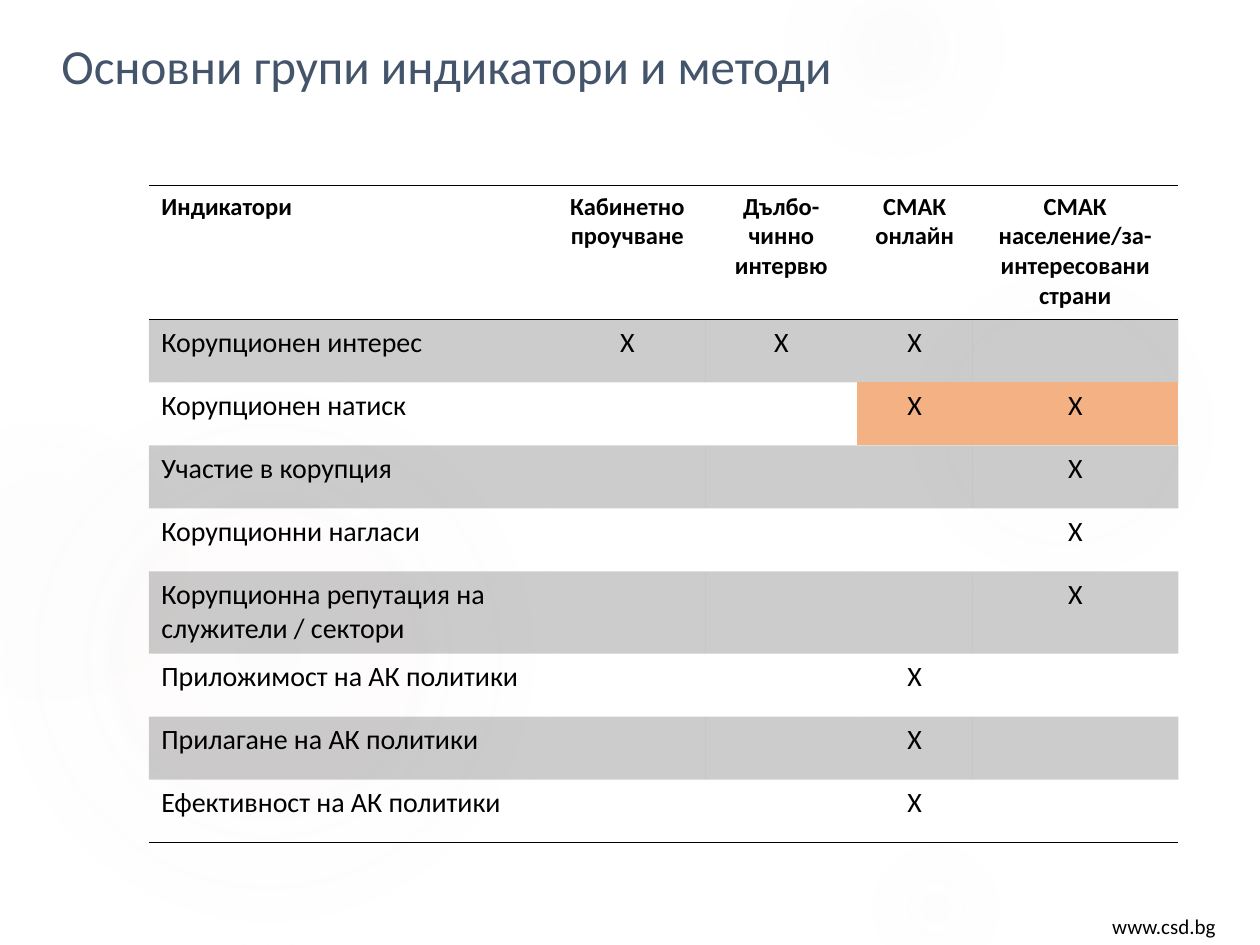
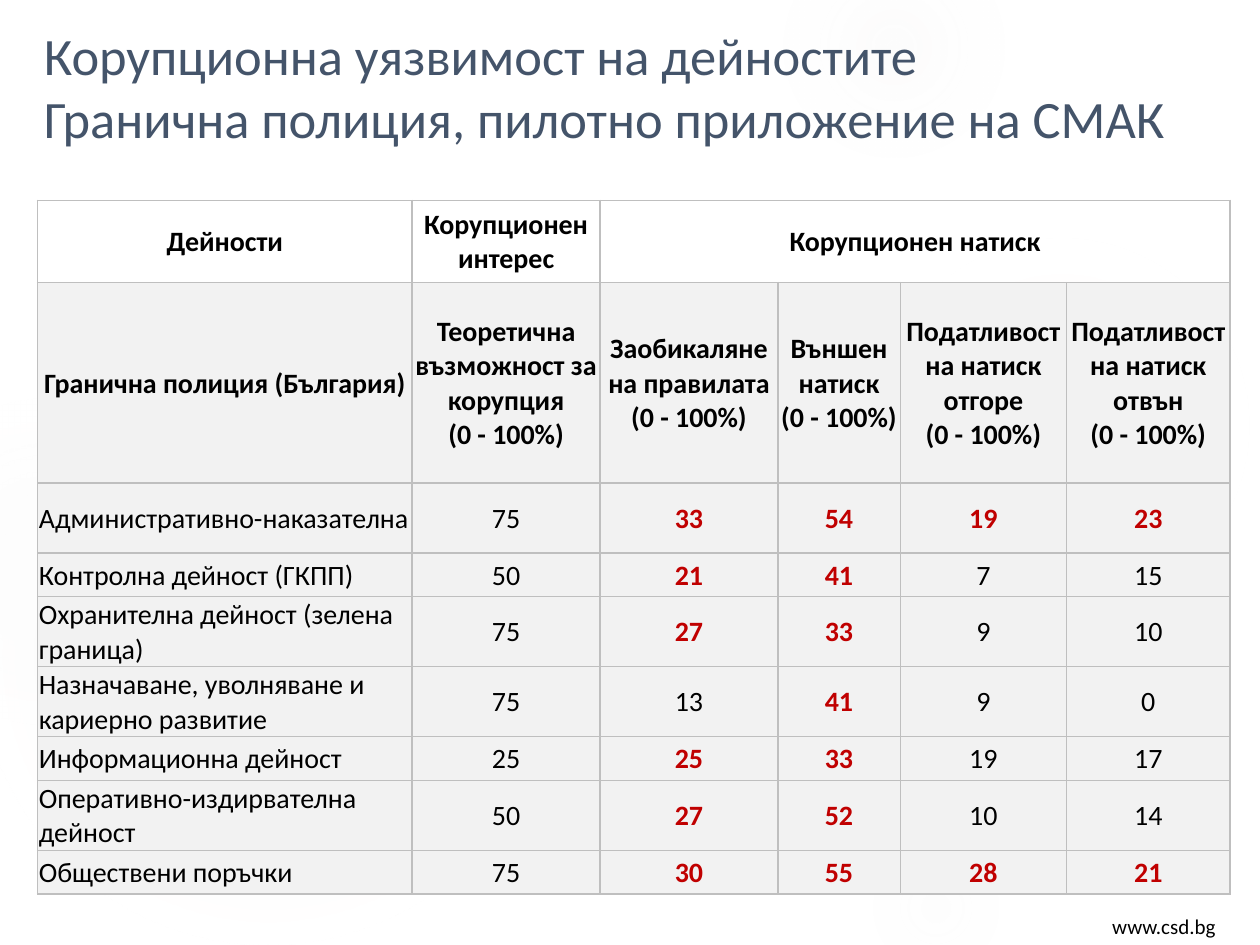
import pptx
import pptx.dml.color
import pptx.enum.shapes
import pptx.enum.text
import pptx.oxml
import pptx.oxml.ns
import pptx.util

Pt = pptx.util.Pt
ALIGN = pptx.enum.text.PP_ALIGN
ANCHOR = pptx.enum.text.MSO_ANCHOR

FONT = "Calibri"
COLORS = {
    "title": "44546A",
    "text": "000000",
    "high": "C00000",
    "rule": "000000",
    "grid": "BFBFBF",
    "stripe": "000000",
    "pressure": "F4B183",
    "panel": "F2F2F2",
    "halo": "F1F0F0",
}
PLAIN_TABLE_STYLE = "{2D5ABB26-0587-4C30-8999-92F81FD0307C}"
SIDES = ("L", "R", "T", "B")

HALOS = [
    (496, 132, 222, ((0, 7), (36, 6), (69, 0))),
    (448, -36, 126, ((0, 14), (36, 7), (73, 0))),
    (496, 480, 78, ((0, 9), (36, 5), (66, 0))),
    (-12, 210, 330, ((0, 11), (36, 10), (75, 0))),
    (-66, 228, 186, ((0, 8), (36, 8), (72, 0))),
]

METHODS = [
    "Индикатори",
    "Кабинетно проучване",
    "Дълбо-чинно интервю",
    "СМАК онлайн",
    "СМАК население/за-интересовани страни",
]
INDICATORS = [
    ("Корупционен интерес", (1, 2, 3)),
    ("Корупционен натиск", (3, 4)),
    ("Участие в корупция", (4,)),
    ("Корупционни нагласи", (4,)),
    ("Корупционна репутация на служители / сектори", (4,)),
    ("Приложимост на АК политики", (3,)),
    ("Прилагане на АК политики", (3,)),
    ("Ефективност на АК политики", (3,)),
]
PRESSURE_ROW = 2

GROUPS = ["Дейности", "Корупционен интерес", "Корупционен натиск", "", "", ""]
MEASURES = [
    "Гранична полиция (България)",
    "Теоретична възможност за корупция\v(0 - 100%)",
    "Заобикаляне на правилата\v(0 - 100%)",
    "Външен натиск\v(0 - 100%)",
    "Податливост на натиск отгоре\v(0 - 100%)",
    "Податливост на натиск отвън\v(0 - 100%)",
]
ACTIVITIES = [
    ("Административно-наказателна", 75, 33, 54, 19, 23),
    ("Контролна дейност (ГКПП)", 50, 21, 41, 7, 15),
    ("Охранителна дейност (зелена граница)", 75, 27, 33, 9, 10),
    ("Назначаване, уволняване и кариерно развитие", 75, 13, 41, 9, 0),
    ("Информационна дейност", 25, 25, 33, 19, 17),
    ("Оперативно-издирвателна дейност", 50, 27, 52, 10, 14),
    ("Обществени поръчки", 75, 30, 55, 28, 21),
]
HIGH_ABOVE = 20
EXTRA_HIGH = (2, 4)


def rgb(color):
    return pptx.dml.color.RGBColor.from_string(COLORS[color])


def format_text(frame, size, color="text", bold=False, align=ALIGN.LEFT):
    for paragraph in frame.paragraphs:
        paragraph.alignment = align
        for part in (paragraph, *paragraph.runs):
            part.font.name = FONT
            part.font.size = Pt(size)
            part.font.bold = bold
            part.font.color.rgb = rgb(color)


def add_text(slide, text, left, top, width, height, size, color="text"):
    frame = slide.shapes.add_textbox(Pt(left), Pt(top), Pt(width), Pt(height)).text_frame
    frame.word_wrap = True
    frame.text = text
    format_text(frame, size, color)


def add_halo(slide, left, top, diameter, stops):
    halo = slide.shapes.add_shape(
        pptx.enum.shapes.MSO_SHAPE.OVAL, Pt(left), Pt(top), Pt(diameter), Pt(diameter)
    )
    halo.shadow.inherit = False
    halo.line.fill.background()
    stop_xml = "".join(
        f'<a:gs pos="{position * 1000}"><a:srgbClr val="{COLORS["halo"]}">'
        f'<a:alpha val="{opacity * 1000}"/></a:srgbClr></a:gs>'
        for position, opacity in stops
    )
    gradient = pptx.oxml.parse_xml(
        f'<a:gradFill {pptx.oxml.ns.nsdecls("a")}><a:gsLst>{stop_xml}</a:gsLst>'
        '<a:path path="circle"><a:fillToRect l="50000" t="50000" r="50000" b="50000"/>'
        "</a:path></a:gradFill>"
    )
    halo.element.spPr.find(pptx.oxml.ns.qn("a:prstGeom")).addnext(gradient)


def add_slide(deck, title, left, top, width, height, size):
    slide = deck.slides.add_slide(deck.slide_layouts[6])
    for halo in HALOS:
        add_halo(slide, *halo)
    add_text(slide, "www.csd.bg", 628.5, 518.5, 91.5, 21.5, 12)
    add_text(slide, title, left, top, width, height, size, "title")
    return slide


def add_table(slide, left, top, widths, heights):
    table = slide.shapes.add_table(
        len(heights), len(widths), Pt(left), Pt(top), Pt(sum(widths)), Pt(sum(heights))
    ).table
    table.first_row = table.horz_banding = False
    table._tbl.tblPr.find(pptx.oxml.ns.qn("a:tableStyleId")).text = PLAIN_TABLE_STYLE
    for column, width in zip(table.columns, widths):
        column.width = Pt(width)
    for row, height in zip(table.rows, heights):
        row.height = Pt(height)
    return table


def fill_cell(cell, color=None, opacity=100):
    if color is None:
        cell.fill.background()
        return
    cell.fill.solid()
    cell.fill.fore_color.rgb = rgb(color)
    if opacity < 100:
        tone = cell._tc.tcPr.find(".//" + pptx.oxml.ns.qn("a:srgbClr"))
        tone.append(pptx.oxml.parse_xml(
            f'<a:alpha {pptx.oxml.ns.nsdecls("a")} val="{opacity * 1000}"/>'
        ))


def border_cell(cell, sides, color):
    properties = cell._tc.get_or_add_tcPr()
    for index, side in enumerate(sides):
        properties.insert(index, pptx.oxml.parse_xml(
            f'<a:ln{side} {pptx.oxml.ns.nsdecls("a")} w="12700"><a:solidFill>'
            f'<a:srgbClr val="{COLORS[color]}"/></a:solidFill></a:ln{side}>'
        ))


def write_cell(cell, text, size, column, **style):
    cell.text_frame.text = text
    style.setdefault("align", ALIGN.CENTER if column else ALIGN.LEFT)
    format_text(cell.text_frame, size, **style)


def add_methods_table(slide):
    heights = [76.5] + [36] * 4 + [47] + [36] * 3
    table = add_table(slide, 85, 106, [229, 89, 87, 65.5, 118], heights)
    for column, method in enumerate(METHODS):
        heading = table.cell(0, column)
        write_cell(heading, method, 14, column, bold=True)
        fill_cell(heading)
        border_cell(heading, ("T", "B"), "rule")
    for row, (indicator, marked) in enumerate(INDICATORS, 1):
        for column in range(len(METHODS)):
            cell = table.cell(row, column)
            mark = "Х" if column in marked else ""
            write_cell(cell, mark if column else indicator, 16, column)
            if row % 2:
                fill_cell(cell, "stripe", 20)
            else:
                fill_cell(cell, "pressure" if row == PRESSURE_ROW and mark else None)
            if row == len(INDICATORS):
                border_cell(cell, ("B",), "rule")


def add_vulnerability_table(slide):
    heights = [47, 114.5, 40, 25, 40, 40, 25, 40, 25]
    table = add_table(slide, 21.5, 114.5, [214, 107.5, 101.5, 70, 95, 93.5], heights)
    for row, values in enumerate([GROUPS, MEASURES, *ACTIVITIES]):
        heading = row < 2
        for column, value in enumerate(values):
            cell = table.cell(row, column)
            high = not heading and column > 1 and (
                value > HIGH_ABOVE or (row, column) == EXTRA_HIGH
            )
            write_cell(
                cell, str(value), 16, column,
                color="high" if high else "text",
                bold=heading or high,
                align=ALIGN.CENTER if heading or column else ALIGN.LEFT,
            )
            cell.vertical_anchor = ANCHOR.MIDDLE
            cell.margin_left = cell.margin_right = cell.margin_top = Pt(0.75)
            cell.margin_bottom = Pt(0)
            fill_cell(cell, "panel" if row else None)
            border_cell(cell, SIDES, "grid")
    table.cell(0, 2).merge(table.cell(0, 5))


def main():
    deck = pptx.Presentation()
    deck.slide_width, deck.slide_height = Pt(720), Pt(540)
    methods = add_slide(deck, "Основни групи индикатори и методи", 28, 16.5, 556, 52, 28)
    add_methods_table(methods)
    vulnerability = add_slide(
        deck,
        "Корупционна уязвимост на дейностите\vГранична полиция, пилотно приложение на СМАК",
        18, 9.5, 672.5, 74, 30,
    )
    add_vulnerability_table(vulnerability)
    deck.save("out.pptx")


if __name__ == "__main__":
    main()
